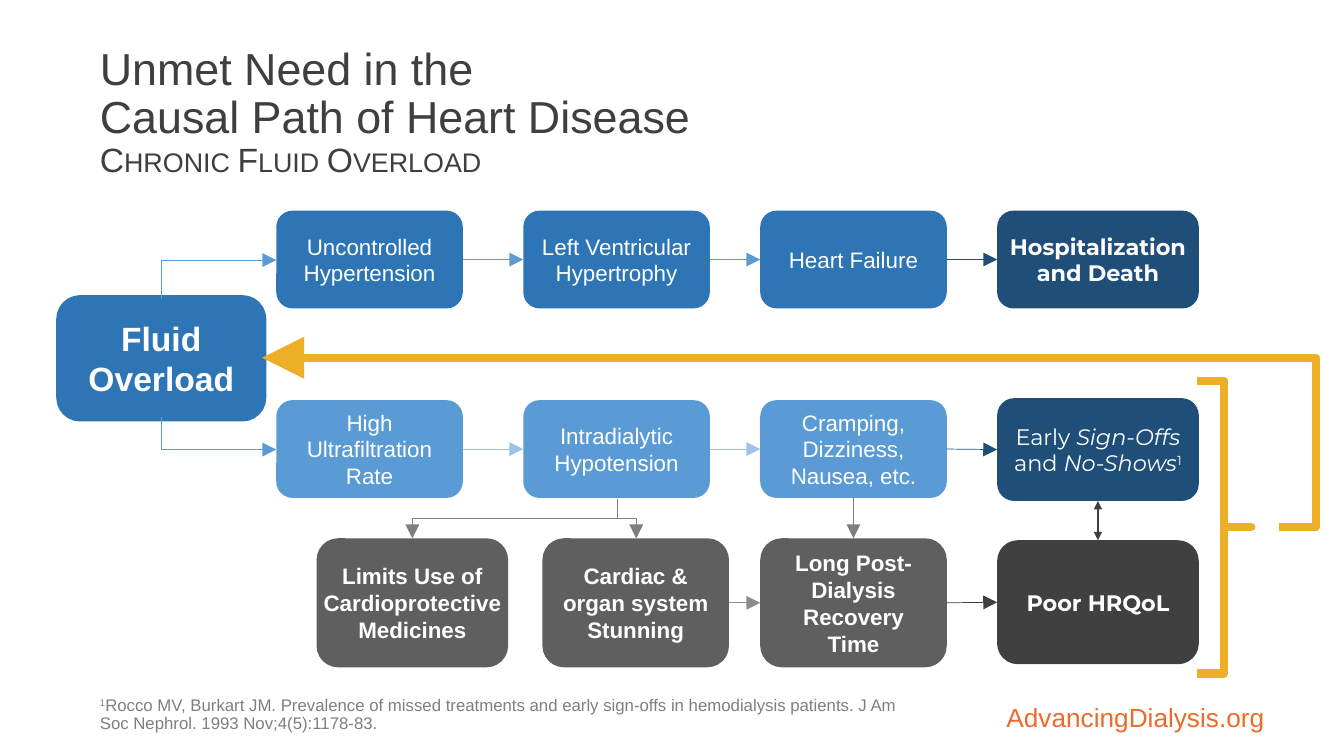
from lxml.etree import SubElement
from pptx import Presentation
from pptx.dml.color import RGBColor
from pptx.enum.shapes import MSO_CONNECTOR, MSO_SHAPE
from pptx.enum.text import MSO_ANCHOR, MSO_AUTO_SIZE, PP_ALIGN
from pptx.oxml.ns import qn
from pptx.util import Inches, Pt

BLUE, LIGHT_BLUE, PALE_BLUE, NAVY = "2E75B6", "5B9BD5", "9DC3E6", "1F4E79"
GRAY, MID_GRAY, CHARCOAL, GOLD = "5F5F5F", "7F7F7F", "3F3F3F", "EDAE28"


def format_text(paragraph, size, color, font="Arial", bold=False):
    for run in paragraph.runs:
        run.font.size = Pt(size)
        run.font.name = font
        run.font.bold = bold
        run.font.color.rgb = RGBColor.from_string(color)
    for line_break in paragraph._p.findall(qn("a:br")):
        SubElement(line_break, qn("a:rPr")).set("sz", str(size * 100))


def style_arrow(connector, color, width=0.5, ends=("tailEnd",), head_size="lg"):
    """Colour a connector and give it triangular heads at the named ends."""
    connector.line.color.rgb = RGBColor.from_string(color)
    connector.line.width = Pt(width)
    for end in ends:
        head = SubElement(connector.line._get_or_add_ln(), qn("a:" + end))
        head.set("type", "triangle")
        head.set("w", head_size)
        head.set("len", head_size)
    SubElement(connector._element.spPr, qn("a:effectLst"))


presentation = Presentation()
presentation.slide_width = Inches(13.33)
presentation.slide_height = Inches(7.5)
slide = presentation.slides.add_slide(presentation.slide_layouts[1])
shapes = slide.shapes

# Title, citation and site address
title = shapes.title
citation = slide.placeholders[1]
site = shapes.add_textbox(Inches(8.12), Inches(6.66), Inches(4.53), Inches(0.61))
for placeholder, top, width, height in [(title, 0.4, 6.79, 1.45), (citation, 6.87, 8.31, 0.63)]:
    placeholder.left, placeholder.top = Inches(0.92), Inches(top)
    placeholder.width, placeholder.height = Inches(width), Inches(height)
    frame = placeholder.text_frame
    frame.margin_left = frame.margin_right = Inches(0.07)
    frame.margin_top = frame.margin_bottom = Inches(0.04)

title.text_frame.text = "Unmet Need in the\vCausal Path of Heart Disease\vChronic Fluid Overload"
title.text_frame.vertical_anchor = MSO_ANCHOR.MIDDLE
paragraph = title.text_frame.paragraphs[0]
format_text(paragraph, 32, CHARCOAL)
subtitle = paragraph.runs[2]
subtitle.font.size = Pt(24)
subtitle.font._element.set("cap", "small")

citation.text_frame.vertical_anchor = MSO_ANCHOR.TOP
paragraph = citation.text_frame.paragraphs[0]
properties = paragraph._p.get_or_add_pPr()
properties.set("marL", "0")
properties.set("indent", "0")
SubElement(properties, qn("a:buNone"))
for text in ("1", "Rocco MV, Burkart JM. Prevalence of missed treatments and early sign-offs in "
             "hemodialysis patients. J Am Soc Nephrol. 1993 Nov;4(5):1178-83."):
    paragraph.add_run().text = text
format_text(paragraph, 12, MID_GRAY)
paragraph.runs[0].font._element.set("baseline", "30000")

site.text_frame.text = "AdvancingDialysis.org"
site.text_frame.vertical_anchor = MSO_ANCHOR.BOTTOM
site.text_frame.margin_left = site.text_frame.margin_right = Inches(0.11)
site.text_frame.margin_top = site.text_frame.margin_bottom = 0
format_text(site.text_frame.paragraphs[0], 18.7, "ED6B2A")

for shape, alignment in [(title, PP_ALIGN.LEFT), (citation, PP_ALIGN.LEFT), (site, PP_ALIGN.RIGHT)]:
    shape.text_frame.word_wrap = True
    shape.text_frame.auto_size = MSO_AUTO_SIZE.NONE
    paragraph = shape.text_frame.paragraphs[0]
    paragraph.alignment = alignment
    paragraph.line_spacing = 0.9
    paragraph.space_before = Pt(0)

# Boxes: name, text, left, top, width, height, fill, font, bold, side margin
columns = [2.74, 5.19, 7.54, 9.89]
box_width, box_height = 1.85, 0.97
boxes = {}
box_rows = [
    ("overload", "Fluid Overload", 0.6, 2.97, 2, 1.17, BLUE, "Arial", True, 0.1),
    ("death", "Hospitalization\vand Death", columns[3], 2.09, 2, box_height, NAVY, "Montserrat", True, 0),
    ("early", "", columns[3], 3.95, 2, 1.02, NAVY, "Montserrat", False, 0),
    ("hrqol", "Poor HRQoL", columns[3], 5.36, 2, 1.23, "404040", "Montserrat", True, 0),
    ("medicines", "Limits Use of Cardioprotective Medicines", 3.14, 5.34, 1.9, 1.28, GRAY, "Arial", True, 0),
    ("stunning", "Cardiac &\norgan system\nStunning", 5.38, 5.34, box_width, 1.28, GRAY, "Arial", True, 0.1),
    ("recovery", "Long Post-Dialysis\vRecovery Time", columns[2], 5.34, box_width, 1.28, GRAY, "Arial", True, 0.1),
]
for top, fill, steps in [
    (2.09, BLUE, [("hypertension", "Uncontrolled\vHypertension"),
                  ("hypertrophy", "Left Ventricular\vHypertrophy"),
                  ("failure", "Heart Failure")]),
    (3.97, LIGHT_BLUE, [("ultrafiltration", "High\vUltrafiltration Rate"),
                        ("hypotension", "Intradialytic Hypotension"),
                        ("cramping", "Cramping,\vDizziness,\nNausea, etc.")]),
]:
    for left, (name, text) in zip(columns, steps):
        box_rows.append((name, text, left, top, box_width, box_height, fill, "Arial", False, 0.1))

for name, text, left, top, width, height, fill, font, bold, margin in box_rows:
    box = shapes.add_shape(MSO_SHAPE.ROUNDED_RECTANGLE, Inches(left), Inches(top), Inches(width), Inches(height))
    boxes[name] = box
    box.shadow.inherit = False
    box.fill.solid()
    box.fill.fore_color.rgb = RGBColor.from_string(fill)
    box.line.fill.background()
    frame = box.text_frame
    frame.word_wrap = True
    frame.vertical_anchor = MSO_ANCHOR.MIDDLE
    frame.margin_left = frame.margin_right = Inches(margin)
    frame.text = text
    if name == "early":
        paragraph = frame.paragraphs[0]
        for part in ("Early ", "Sign-Offs", "and ", "No-Shows", "1"):
            if part == "and ":
                paragraph.add_line_break()
            run = paragraph.add_run()
            run.text = part
            run.font.italic = part in ("Sign-Offs", "No-Shows")
        run.font._element.set("baseline", "30000")
    for paragraph in frame.paragraphs:
        paragraph.alignment = PP_ALIGN.CENTER
        format_text(paragraph, 24 if name == "overload" else 16, "FFFFFF", font, bold)
boxes["overload"].line.color.rgb = RGBColor.from_string(BLUE)
boxes["overload"].line.width = Pt(6)

# Straight arrows between boxes
TOP, LEFT, BOTTOM, RIGHT = range(4)
for start, end, color in [
    ("hypertension", "hypertrophy", LIGHT_BLUE),
    ("hypertrophy", "failure", LIGHT_BLUE),
    ("failure", "death", NAVY),
    ("ultrafiltration", "hypotension", PALE_BLUE),
    ("hypotension", "cramping", PALE_BLUE),
    ("cramping", "early", NAVY),
    ("stunning", "recovery", "8C8C8C"),
    ("recovery", "hrqol", CHARCOAL),
    ("cramping", "recovery", MID_GRAY),
    ("early", "hrqol", CHARCOAL),
]:
    vertical = boxes[start].left == boxes[end].left
    arrow = shapes.add_connector(MSO_CONNECTOR.STRAIGHT, 0, 0, 0, 0)
    arrow.begin_connect(boxes[start], BOTTOM if vertical else RIGHT)
    arrow.end_connect(boxes[end], TOP if vertical else LEFT)
    if start == "early":
        style_arrow(arrow, color, 1.75, ("headEnd", "tailEnd"), "med")
    else:
        style_arrow(arrow, color)

# Elbow arrows that leave vertically: a quarter turn about the midpoint
for x1, y1, x2, y2, preset, color in [
    (1.6, 2.97, 2.74, 2.58, "bentConnector2", LIGHT_BLUE),
    (1.6, 4.14, 2.74, 4.46, "bentConnector2", LIGHT_BLUE),
    (6.12, 4.95, 6.31, 5.34, "bentConnector3", MID_GRAY),
    (6.12, 4.95, 4.09, 5.34, "bentConnector3", MID_GRAY),
]:
    middle_x, middle_y = (x1 + x2) / 2, (y1 + y2) / 2
    downward = y2 > y1
    half_width = abs(y2 - y1) / 2
    half_height = (x2 - x1) / 2 if downward else (x1 - x2) / 2
    elbow = shapes.add_connector(
        MSO_CONNECTOR.ELBOW, Inches(middle_x - half_width), Inches(middle_y + half_height),
        Inches(middle_x + half_width), Inches(middle_y - half_height))
    elbow._element.spPr.find(qn("a:xfrm")).set("rot", str((90 if downward else 270) * 60000))
    elbow._element.spPr.find(qn("a:prstGeom")).set("prst", preset)
    style_arrow(elbow, color)

# Bracket and feedback arrow
bracket = shapes.add_shape(MSO_SHAPE.RIGHT_BRACE, Inches(11.87), Inches(3.78), Inches(0.54), Inches(2.9))
bracket.adjustments[0] = 0
bracket.adjustments[1] = 0.5
bracket.shadow.inherit = False
bracket.fill.background()
bracket.line.color.rgb = RGBColor.from_string(GOLD)
bracket.line.width = Pt(6)

feedback = shapes.add_connector(MSO_CONNECTOR.ELBOW, Inches(12.69), Inches(5.23), Inches(2.6), Inches(3.55))
bend = SubElement(feedback._element.spPr.find(qn("a:prstGeom")).find(qn("a:avLst")), qn("a:gd"))
bend.set("name", "adj1")
bend.set("fmla", "val -3600")
style_arrow(feedback, GOLD, 6)

presentation.save("out.pptx")
